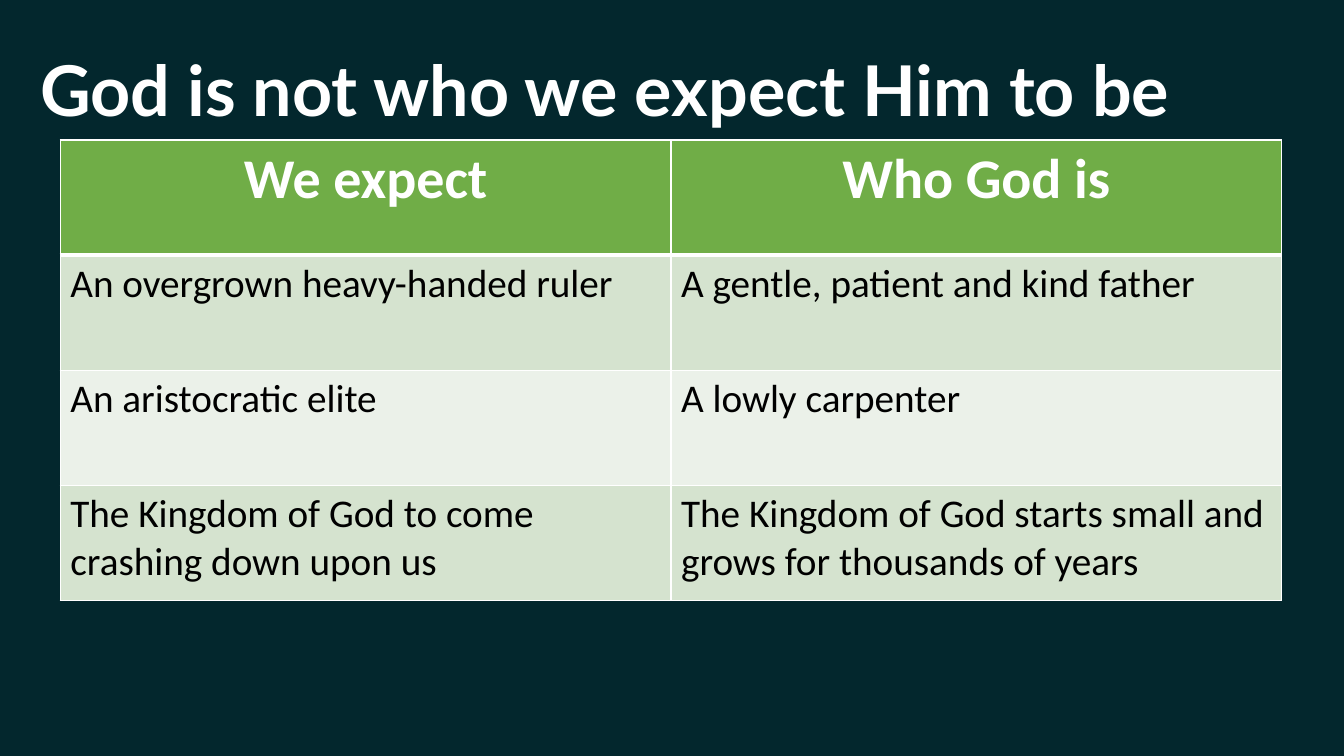
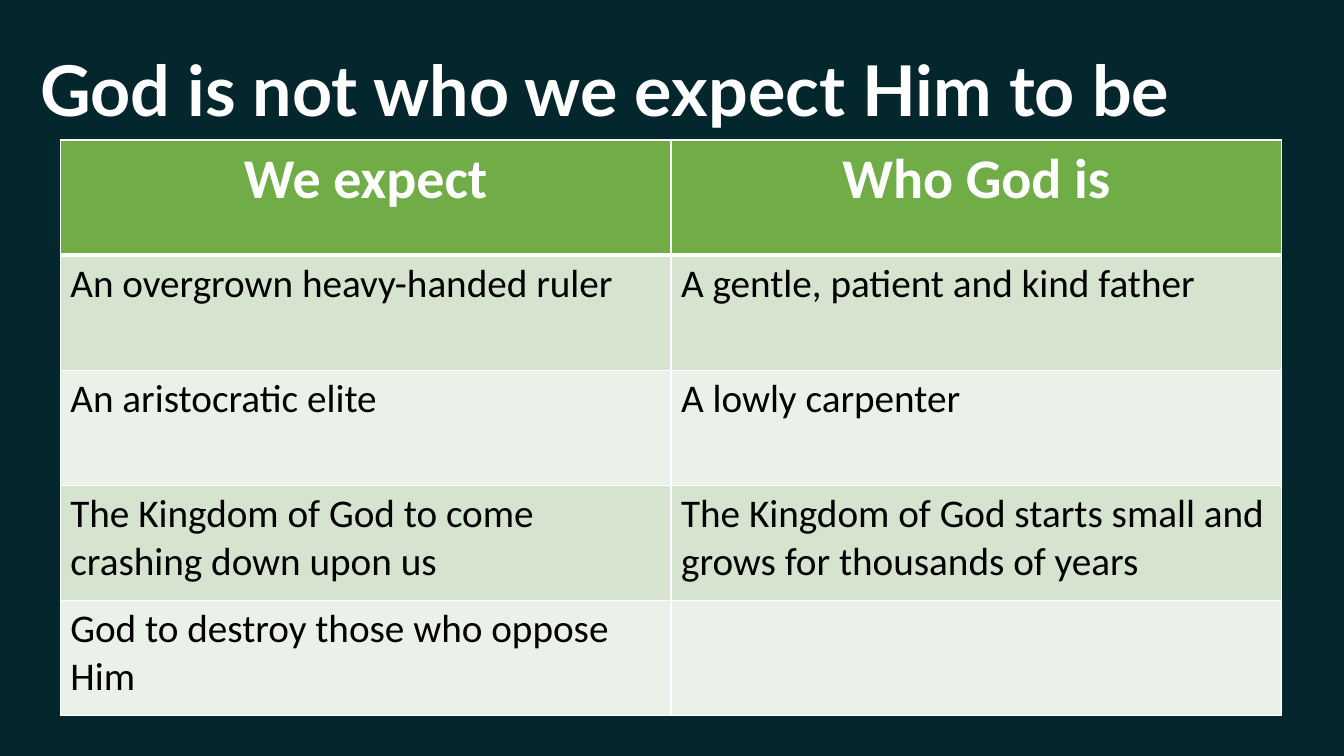
from lxml import etree
from pptx import Presentation
from pptx.dml.color import RGBColor
from pptx.enum.text import MSO_ANCHOR, PP_ALIGN
from pptx.oxml.ns import qn
from pptx.util import Cm, Pt

CENTER, LEFT = PP_ALIGN.CENTER, PP_ALIGN.LEFT
MIDDLE = MSO_ANCHOR.MIDDLE

TITLE = "God is not who we expect Him to be"
HEADER = ("We expect", "Who God is")
CONTRASTS = [
    ("An overgrown heavy-handed ruler", "A gentle, patient and kind father"),
    ("An aristocratic elite", "A lowly carpenter"),
    ("The Kingdom of God to come crashing down upon us",
     "The Kingdom of God starts small and grows for thousands of years"),
]
OPEN_QUESTION = ("God to destroy those who oppose Him", "")
SLIDES = [
    [HEADER, *CONTRASTS],
    [HEADER, *CONTRASTS, OPEN_QUESTION],
]

BACKGROUND, WHITE, BLACK = "03272D", "FFFFFF", "000000"
HEADER_FILL = "70AD47"
BAND_FILLS = ("EBF1E9", "D5E3CF")  # even rows, odd rows
TITLE_FONT, TABLE_FONT = "Lato", "Calibri"
COL_WIDTH, ROW_HEIGHT = Cm(15.39), Cm(2.9)
THIN, THICK = Pt(1), Pt(3)


def color(hex_code):
    return RGBColor.from_string(hex_code)


def set_font(p, name, size, hex_code, bold):
    p.font.name = name
    p.font.size = Pt(size)
    p.font.bold = bold
    p.font.color.rgb = color(hex_code)


def set_borders(cell, top, bottom):
    """Draw white borders; the sides are thin, top and bottom as given."""
    widths = {"a:lnL": THIN, "a:lnR": THIN, "a:lnT": top, "a:lnB": bottom}
    tc_pr = cell._tc.get_or_add_tcPr()
    for i, (tag, width) in enumerate(widths.items()):
        ln = etree.Element(qn(tag), w=str(width))
        fill = etree.SubElement(ln, qn("a:solidFill"))
        etree.SubElement(fill, qn("a:srgbClr"), val=WHITE)
        tc_pr.insert(i, ln)


def add_title(s):
    tf = s.shapes.add_textbox(Cm(0.76), Cm(0.38), Cm(31.95), Cm(3.68)).text_frame
    tf.word_wrap = True
    tf.vertical_anchor = MIDDLE
    p = tf.paragraphs[0]
    p.text = TITLE
    set_font(p, TITLE_FONT, 50, WHITE, True)


def fill_cell(cell, text, row):
    is_header = row == 0
    cell.fill.solid()
    cell.fill.fore_color.rgb = color(HEADER_FILL if is_header else BAND_FILLS[row % 2])
    set_borders(cell, THICK if row == 1 else THIN, THICK if is_header else THIN)
    p = cell.text_frame.paragraphs[0]
    p.text = text
    p.alignment = CENTER if is_header else LEFT
    if is_header:
        set_font(p, TABLE_FONT, 40, WHITE, True)
    else:
        set_font(p, TABLE_FONT, 28, BLACK, False)


def add_comparison(s, rows):
    n_cols = len(HEADER)
    table = s.shapes.add_table(len(rows), n_cols, Cm(1.52), Cm(3.53),
                               COL_WIDTH * n_cols, ROW_HEIGHT * len(rows)).table
    for column in table.columns:
        column.width = COL_WIDTH
    for r, texts in enumerate(rows):
        table.rows[r].height = ROW_HEIGHT
        for c, text in enumerate(texts):
            fill_cell(table.cell(r, c), text, r)


def main():
    prs = Presentation()
    prs.slide_width, prs.slide_height = Cm(33.87), Cm(19.05)
    for rows in SLIDES:
        s = prs.slides.add_slide(prs.slide_layouts[6])
        s.background.fill.solid()
        s.background.fill.fore_color.rgb = color(BACKGROUND)
        add_title(s)
        add_comparison(s, rows)
    prs.save("out.pptx")


if __name__ == "__main__":
    main()
